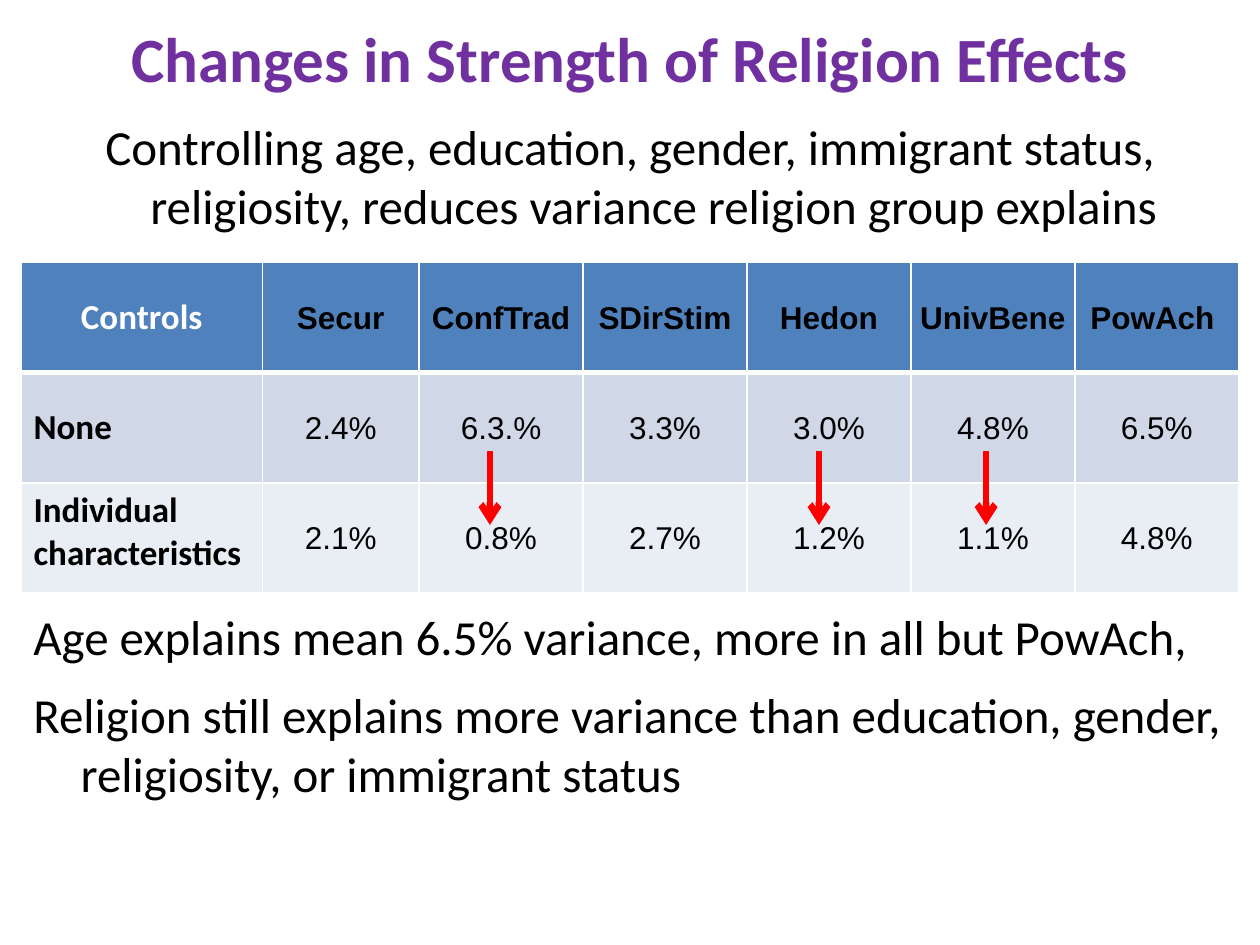
import pptx
import pptx.util
import pptx.dml.color
import pptx.enum.shapes
import pptx.enum.text
from dataclasses import dataclass
from lxml import etree
from pptx.oxml.ns import qn

Pt = pptx.util.Pt
Align = pptx.enum.text.PP_ALIGN
Anchor = pptx.enum.text.MSO_ANCHOR


@dataclass(frozen=True)
class Theme:
    title: str = "7030A0"
    ink: str = "000000"
    white: str = "FFFFFF"
    arrow: str = "FF0000"
    bands: tuple = ("4F81BD", "D0D8E8", "E9EDF4")
    sans: str = "Calibri"
    data: str = "Arial"
    head_size: int = 36
    body_size: int = 28
    label_size: int = 20
    data_size: int = 18


THEME = Theme()
WIDTHS = [138, 89.5] + [93.7] * 5
ROW = 63
ROWS = [
    ["Controls", "Secur", "ConfTrad", "SDirStim", "Hedon", "UnivBene", "PowAch "],
    ["None", "2.4%", "6.3.%", "3.3%", "3.0%", "4.8%", "6.5%"],
    ["Individual characteristics", "2.1%", "0.8%", "2.7%", "1.2%", "1.1%", "4.8%"],
]


def rgb(code):
    return pptx.dml.color.RGBColor.from_string(code)


def style(par, size, color, face=THEME.sans, bold=False, align=Align.LEFT):
    font = par.font
    font.name, font.size, font.bold = face, Pt(size), bold
    font.color.rgb = rgb(color)
    par.alignment = align


def add_box(slide, box):
    frame = slide.shapes.add_textbox(*map(Pt, box)).text_frame
    frame.word_wrap = True
    return frame


def add_title(slide, box):
    frame = add_box(slide, box)
    frame.vertical_anchor = Anchor.MIDDLE
    par = frame.paragraphs[0]
    par.text = "Changes in Strength of Religion Effects"
    style(par, THEME.head_size, THEME.title, bold=True, align=Align.CENTER)


def add_body(slide, box):
    """Place the text above and below the table, with a wide gap for it."""
    lines = [
        ("Controlling age, education, gender, immigrant status, religiosity, "
         "reduces variance religion group explains", Align.CENTER, 5),
        ("Age explains mean 6.5% variance, more in all but PowAch,", Align.LEFT, 213),
        ("Religion still explains more variance than education, gender, "
         "religiosity, or immigrant status", Align.LEFT, 11),
    ]
    frame = add_box(slide, box)
    for i, (text, align, gap) in enumerate(lines):
        par = frame.add_paragraph() if i else frame.paragraphs[0]
        par.text = text
        style(par, THEME.body_size, THEME.ink, align=align)
        par.space_before = Pt(gap)
        props = par._p.get_or_add_pPr()
        props.set("marL", str(Pt(27)))
        props.set("indent", str(Pt(-27)))


def set_edges(cell, head):
    """Draw white cell borders, thicker under the header row."""
    props = cell._tc.get_or_add_tcPr()
    for i, side in enumerate(("lnL", "lnR", "lnT", "lnB")):
        width = 3 if head and side == "lnB" else 1
        line = etree.Element(qn("a:" + side), w=str(Pt(width)))
        fill = etree.SubElement(line, qn("a:solidFill"))
        etree.SubElement(fill, qn("a:srgbClr"), val=THEME.white)
        props.insert(i, line)


def fill_cell(cell, text, row, col):
    cell.fill.solid()
    cell.fill.fore_color.rgb = rgb(THEME.bands[row])
    set_edges(cell, row == 0)
    cell.text = text
    par = cell.text_frame.paragraphs[0]
    if col:
        cell.margin_left = cell.margin_right = cell.margin_top = Pt(0.7)
        cell.margin_bottom = 0
        style(par, THEME.data_size, THEME.ink, THEME.data, row == 0, Align.CENTER)
    else:
        style(par, THEME.label_size, THEME.ink if row else THEME.white,
              bold=True, align=Align.LEFT if row else Align.CENTER)
    cell.vertical_anchor = Anchor.TOP if (row, col) == (2, 0) else Anchor.MIDDLE


def add_arrow(slide, x, top, end):
    line = slide.shapes.add_connector(
        pptx.enum.shapes.MSO_CONNECTOR.STRAIGHT, Pt(x), Pt(top), Pt(x), Pt(end))
    line.line.color.rgb = rgb(THEME.arrow)
    line.line.width = Pt(3.75)
    etree.SubElement(line.line._get_or_add_ln(), qn("a:tailEnd"), type="arrow")
    etree.SubElement(line._element.spPr, qn("a:effectLst"))


def add_grid(slide, box):
    """Place the table and the arrows that mark its large drops."""
    left, top = box[:2]
    grid = slide.shapes.add_table(len(ROWS), len(WIDTHS), *map(Pt, box)).table
    for col, width in enumerate(WIDTHS):
        grid.columns[col].width = Pt(width)
    for row, texts in enumerate(ROWS):
        grid.rows[row].height = Pt(ROW)
        for col, text in enumerate(texts):
            fill_cell(grid.cell(row, col), text, row, col)
    for x in (551.5, 456, 268):
        add_arrow(slide, left + x, top + 108, top + 150)


def main():
    deck = pptx.Presentation()
    deck.slide_width, deck.slide_height = Pt(720), Pt(540)
    slide = deck.slides.add_slide(deck.slide_layouts[6])
    add_title(slide, (36, -12, 648, 90))
    add_body(slide, (12, 63, 696, 434))
    add_grid(slide, (12, 150, sum(WIDTHS), ROW * len(ROWS)))
    deck.save("out.pptx")


if __name__ == "__main__":
    main()
